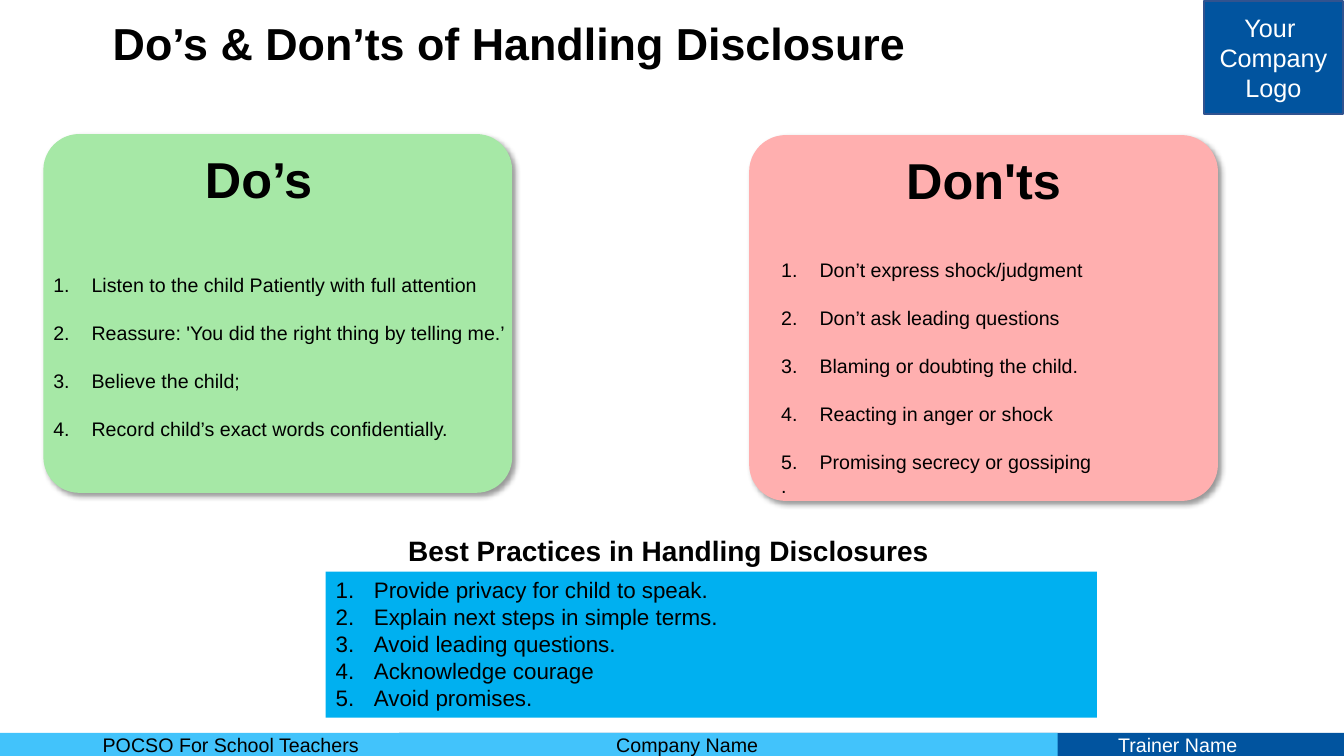
import dataclasses

import lxml.etree
import pptx
import pptx.dml.color
import pptx.enum.shapes
import pptx.enum.text
import pptx.oxml
import pptx.oxml.ns
import pptx.util

Inches = pptx.util.Inches
Pt = pptx.util.Pt
SHAPE = pptx.enum.shapes.MSO_SHAPE
ALIGN = pptx.enum.text.PP_ALIGN
ANCHOR = pptx.enum.text.MSO_ANCHOR


@dataclasses.dataclass(frozen=True)
class Theme:
    font: str = "Arial"
    black: str = "000000"
    white: str = "FFFFFF"
    navy: str = "01549F"
    edge: str = "31538F"
    sky: str = "42C3FB"
    blue: str = "00B0F0"
    green: str = "A6E8A6"
    pink: str = "FFAFAF"
    title: int = 32
    head: int = 36
    sub: int = 20
    logo: int = 18
    tip: int = 16
    body: int = 14


THEME = Theme()

DOS = [
    "Listen to the child Patiently with full attention",
    "Reassure: 'You did the right thing by telling me.’",
    "Believe the child;",
    "Record child’s exact words confidentially.",
]
DONTS = [
    "Don’t express shock/judgment",
    "Don’t ask leading questions",
    "Blaming or doubting the child.",
    "Reacting in anger or shock",
    "Promising secrecy or gossiping",
]
TIPS = [
    "Provide privacy for child to speak.",
    "Explain next steps in simple terms.",
    "Avoid leading questions.",
    "Acknowledge courage",
    "Avoid promises.",
]


def tint(code):
    return pptx.dml.color.RGBColor.from_string(code)


def block(slide, box, fill, kind=SHAPE.RECTANGLE):
    """Add a flat filled shape without outline or shadow."""
    shape = slide.shapes.add_shape(kind, *map(Inches, box))
    shape.shadow.inherit = False
    shape.fill.solid()
    shape.fill.fore_color.rgb = tint(fill)
    shape.line.fill.background()
    return shape


def shade(shape):
    """Cast a soft shadow to the lower right."""
    cast = shape._element.spPr.find(pptx.oxml.ns.qn("a:effectLst"))
    cast.append(pptx.oxml.parse_xml(
        f'<a:outerShdw {pptx.oxml.ns.nsdecls("a")} blurRad="{Pt(4)}" dist="{Pt(3)}" '
        f'dir="2700000" algn="tl" rotWithShape="0"><a:srgbClr val="{THEME.black}">'
        '<a:alpha val="40000"/></a:srgbClr></a:outerShdw>'))


def number(para):
    """Give the paragraph an automatic number and a hanging indent."""
    props = para._p.get_or_add_pPr()
    props.set("marL", str(Inches(0.38)))
    props.set("indent", str(-Inches(0.38)))
    mark = lxml.etree.SubElement(props, pptx.oxml.ns.qn("a:buAutoNum"))
    mark.set("type", "arabicPeriod")


def write(shape, lines, size, color=THEME.black, bold=False, align=ALIGN.LEFT,
          anchor=ANCHOR.TOP, pad=None, lead=None, gap=0, count=0):
    """Fill the shape with one paragraph a line; the first count are numbered."""
    frame = shape.text_frame
    frame.word_wrap = True
    frame.vertical_anchor = anchor
    if pad:
        frame.margin_left = frame.margin_right = Inches(pad)
        frame.margin_top = frame.margin_bottom = Inches(pad)
    for i, line in enumerate(lines):
        para = frame.add_paragraph() if i else frame.paragraphs[0]
        para.alignment = align
        if lead:
            para.line_spacing = lead
        if i < count:
            number(para)
            if i:
                para.space_before = Pt(gap)
        run = para.add_run()
        run.text = line
        run.font.name = THEME.font
        run.font.size = Pt(size)
        run.font.bold = bold
        run.font.color.rgb = tint(color)


def label(slide, box, lines, size, **style):
    write(slide.shapes.add_textbox(*map(Inches, box)), lines, size, **style)


def footer(slide, box):
    left, top, width, height = box
    block(slide, (left + 3.96, top, width - 3.96, height), THEME.navy)
    block(slide, (left, top, 10.49, height), THEME.sky)
    for x, wide, text, color in [
        (0.92, 3.86, "POCSO For School Teachers", THEME.black),
        (5.96, 2.46, " Company Name", THEME.black),
        (10.94, 2.39, " Trainer Name", THEME.white),
    ]:
        label(slide, (left + x, top - 0.05, wide, 0.34), [text], THEME.body, color=color)


def logo(slide, box):
    tile = block(slide, box, THEME.navy)
    tile.line.color.rgb = tint(THEME.edge)
    tile.line.width = Pt(1)
    write(tile, ["Your ", "Company", "Logo"], THEME.logo, color=THEME.white,
          align=ALIGN.CENTER, anchor=ANCHOR.MIDDLE)


def card(slide, box, fill, head, items, shift, inset, drop, tail=()):
    """Draw a rounded panel; shift moves the heading, inset and drop place the list."""
    left, top, width, height = box
    panel = block(slide, box, fill, SHAPE.ROUNDED_RECTANGLE)
    panel.adjustments[0] = 0.1
    shade(panel)
    label(slide, (left + shift, top, width, 0.95), [head], THEME.head, bold=True,
          align=ALIGN.CENTER, anchor=ANCHOR.MIDDLE, pad=0.15, lead=0.9)
    label(slide, (left + inset, top + drop, width + 0.07 - inset, height - drop),
          [*items, *tail], THEME.body, gap=17.5, count=len(items))


def advice(slide, box):
    left, top, width, height = box
    write(block(slide, box, THEME.blue), TIPS, THEME.tip, count=len(TIPS))
    label(slide, (left + 0.72, top - 0.49, 5.43, 0.61),
          ["Best Practices in Handling Disclosures"], THEME.sub, bold=True,
          anchor=ANCHOR.MIDDLE, lead=0.9)


def main():
    deck = pptx.Presentation()
    deck.slide_width, deck.slide_height = Inches(13.33), Inches(7.5)
    slide = deck.slides.add_slide(deck.slide_layouts[6])
    footer(slide, (0, 7.27, 13.33, 0.23))
    logo(slide, (11.94, 0.01, 1.38, 1.12))
    label(slide, (1.02, 0.15, 11.5, 0.61), ["Do’s & Don’ts of Handling Disclosure"],
          THEME.title, bold=True, anchor=ANCHOR.MIDDLE, lead=0.9)
    card(slide, (0.43, 1.33, 4.65, 3.56), THEME.green, "Do’s", DOS, -0.19, 0, 1.33)
    card(slide, (7.43, 1.34, 4.65, 3.63), THEME.pink, "Don'ts", DONTS, 0, 0.22, 1.17,
         tail=["."])
    advice(slide, (3.23, 5.67, 7.65, 1.45))
    deck.save("out.pptx")


if __name__ == "__main__":
    main()
